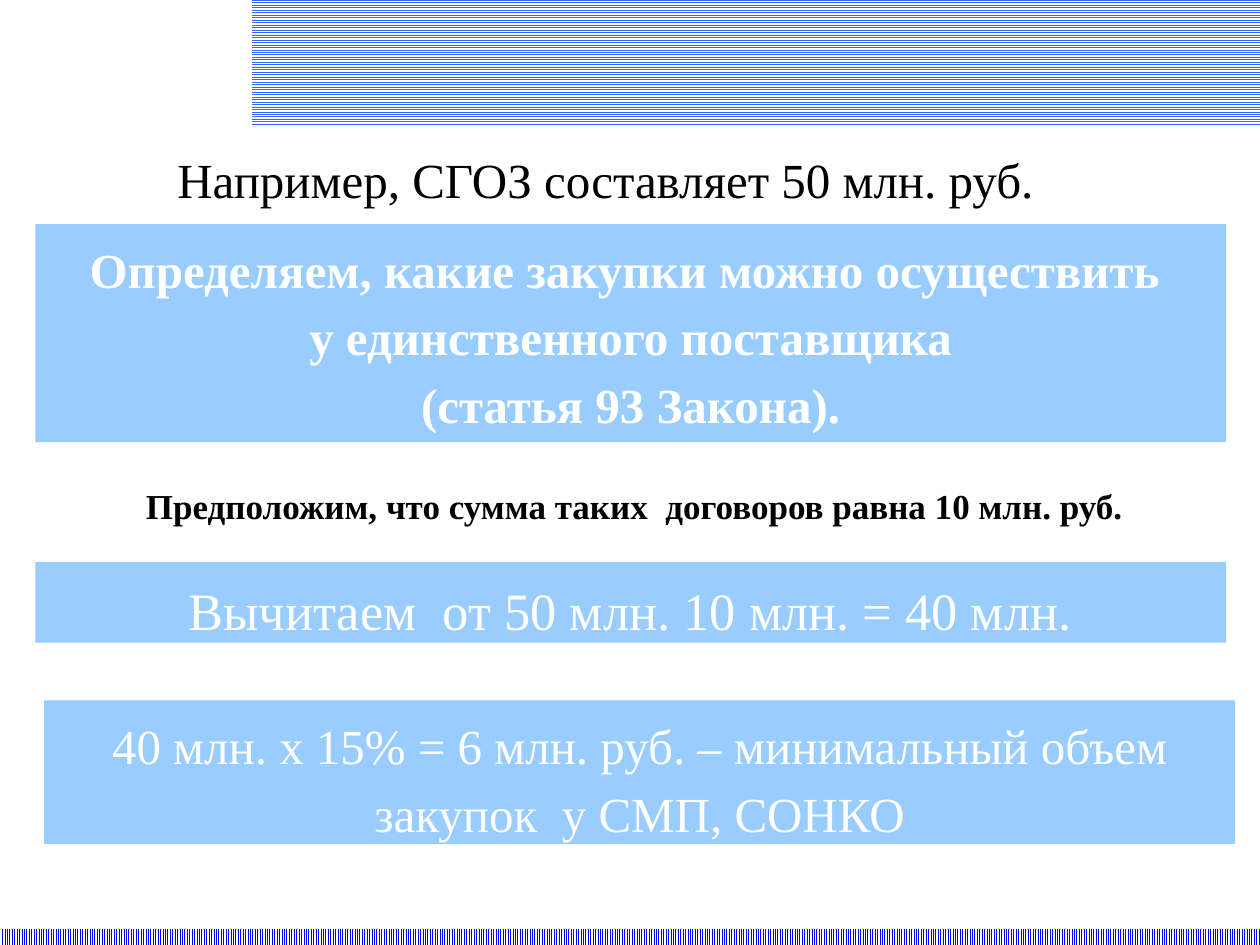
from dataclasses import dataclass
from math import cos, pi, sin

from pptx import Presentation
from pptx.dml.color import RGBColor
from pptx.enum.dml import MSO_PATTERN
from pptx.enum.shapes import MSO_SHAPE
from pptx.enum.text import MSO_ANCHOR, MSO_AUTO_SIZE, PP_ALIGN
from pptx.util import Inches, Pt

RECTANGLE = MSO_SHAPE.RECTANGLE
NARROW_HORIZONTAL = MSO_PATTERN.NARROW_HORIZONTAL
NARROW_VERTICAL = MSO_PATTERN.NARROW_VERTICAL
CENTER = PP_ALIGN.CENTER
TOP = MSO_ANCHOR.TOP
GROW = MSO_AUTO_SIZE.SHAPE_TO_FIT_TEXT

WIDTH, HEIGHT = 10, 7.5


@dataclass(frozen=True)
class Theme:
    font: str = "Times New Roman"
    ink: RGBColor = RGBColor(0x00, 0x00, 0x00)
    paper: RGBColor = RGBColor(0xFF, 0xFF, 0xFF)
    panel: RGBColor = RGBColor(0x99, 0xCC, 0xFF)
    header: RGBColor = RGBColor(0x33, 0x66, 0xFF)
    footer: RGBColor = RGBColor(0x00, 0x00, 0xFF)
    note_size: int = 20
    body_size: int = 28
    sum_size: int = 30
    line_spacing: float = 1.15


class SlideBuilder:
    """Holds the theme and the current slide; places are in inches."""

    def __init__(self, page, theme):
        self.page = page
        self.theme = theme

    def set_text(self, shape, lines, size, color, bold=False):
        frame = shape.text_frame
        frame.word_wrap = True
        frame.vertical_anchor = TOP
        frame.auto_size = GROW
        frame.text = "\n".join(lines)
        for para in frame.paragraphs:
            para.alignment = CENTER
            para.line_spacing = self.theme.line_spacing
            para.space_before = Pt(0)
            para.font.name = self.theme.font
            para.font.size = Pt(size)
            para.font.bold = bold
            para.font.color.rgb = color

    def title(self, place, text):
        shape = self.page.shapes.title
        shape.left, shape.top, shape.width, shape.height = map(Inches, place)
        self.set_text(shape, [text], self.theme.body_size, self.theme.ink)

    def note(self, place, text):
        box = self.page.shapes.add_textbox(*map(Inches, place))
        self.set_text(box, [text], self.theme.note_size, self.theme.ink, bold=True)

    def rectangle(self, place):
        shape = self.page.shapes.add_shape(RECTANGLE, *map(Inches, place))
        shape.shadow.inherit = False
        shape.line.fill.background()
        return shape

    def panel(self, place, lines, size, bold=False):
        shape = self.rectangle(place)
        shape.fill.solid()
        shape.fill.fore_color.rgb = self.theme.panel
        self.set_text(shape, lines, size, self.theme.paper, bold)

    def hatch(self, shape, pattern, color):
        shape.fill.patterned()
        shape.fill.pattern = pattern
        shape.fill.fore_color.rgb = color
        shape.fill.back_color.rgb = self.theme.paper

    def header_band(self, left, height, steps=48):
        # Straight on the right, a half circle on the left
        radius = height / 2
        angles = [pi / 2 + pi * step / steps for step in range(steps + 1)]
        arc = [(left + radius + radius * cos(angle), radius + radius * sin(angle))
               for angle in angles]
        builder = self.page.shapes.build_freeform(WIDTH, height, scale=Inches(1))
        builder.add_line_segments(arc + [(WIDTH, 0)], close=True)
        band = builder.convert_to_shape()
        band.shadow.inherit = False
        band.line.fill.background()
        self.hatch(band, NARROW_HORIZONTAL, self.theme.header)

    def footer_band(self, height):
        band = self.rectangle((0, HEIGHT - height, WIDTH, height))
        self.hatch(band, NARROW_VERTICAL, self.theme.footer)


def main():
    deck = Presentation()
    deck.slide_width, deck.slide_height = Inches(WIDTH), Inches(HEIGHT)
    theme = Theme()
    slide = SlideBuilder(deck.slides.add_slide(deck.slide_layouts[5]), theme)
    left, indent, width = 0.28, 0.35, 9.45

    # Hatched bands
    slide.header_band(left=1.69, height=1.21)
    slide.footer_band(height=0.13)

    # Starting sum
    slide.title((0.67, 1.07, 8.27, 0.6), "Например, СГОЗ составляет 50 млн. руб.")

    # Steps of the calculation
    slide.panel((left, 1.78, width, 1.73),
                ["Определяем, какие закупки можно осуществить ",
                 "у единственного поставщика",
                 "(статья 93 Закона)."], theme.body_size, bold=True)
    slide.note((indent, 3.75, 9.37, 0.46),
               "Предположим, что сумма таких  договоров равна 10 млн. руб.")
    slide.panel((left, 4.46, width, 0.64),
                ["Вычитаем  от 50 млн. 10 млн. = 40 млн."], theme.sum_size)
    slide.panel((indent, 5.56, width, 1.14),
                ["40 млн. х 15% = 6 млн. руб. – минимальный объем "
                 "закупок  у СМП, СОНКО"], theme.body_size)

    deck.save("out.pptx")


if __name__ == "__main__":
    main()
